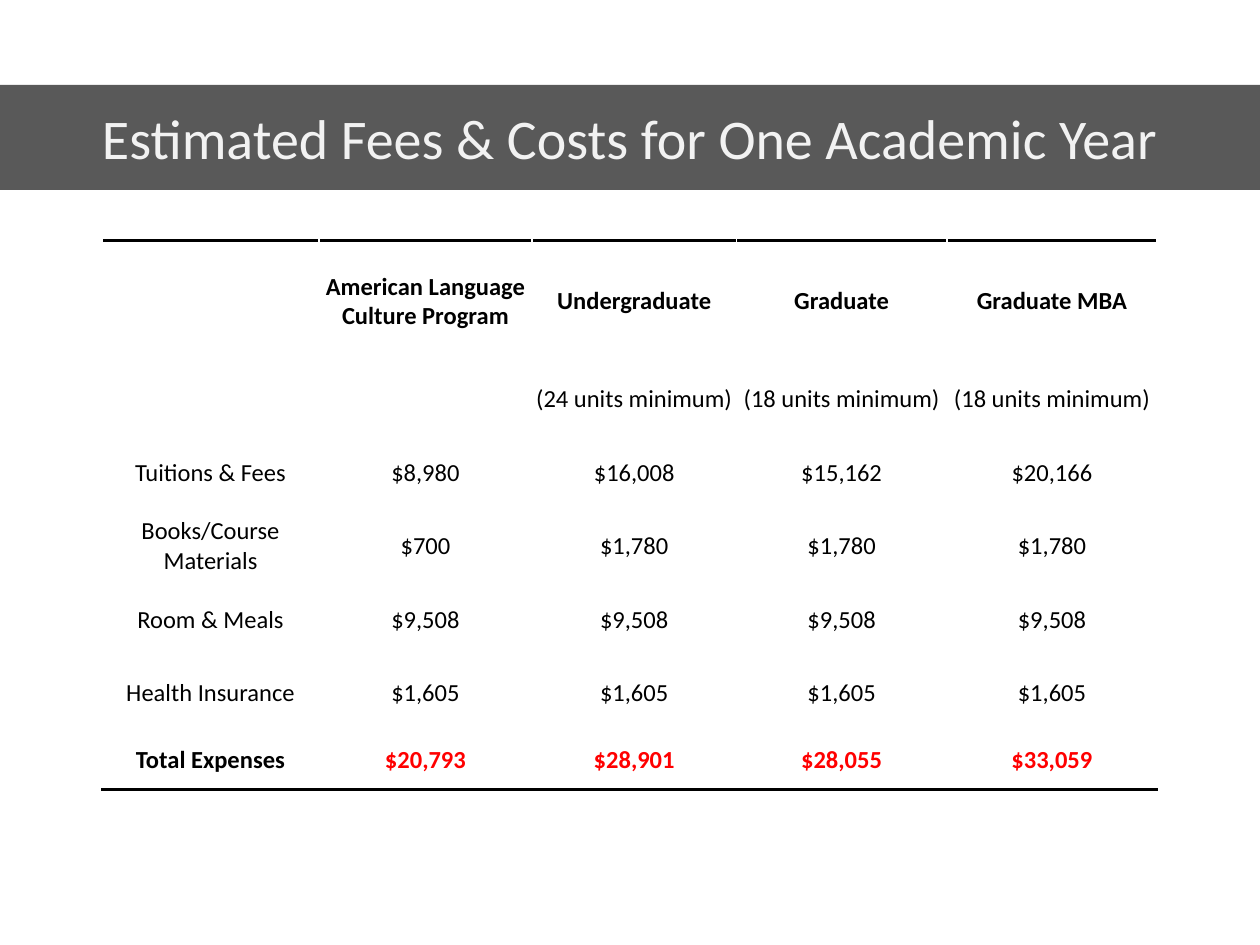
import pptx
import pptx.util
import pptx.oxml
from pptx.dml.color import RGBColor
from pptx.enum.text import MSO_ANCHOR, MSO_AUTO_SIZE, PP_ALIGN

Pt = pptx.util.Pt

# Content
TITLE = "Estimated Fees & Costs for One Academic Year"
ROWS = [
    ["", "American Language\nCulture Program", "Undergraduate", "Graduate", "Graduate MBA"],
    ["", "", "(24 units minimum)", "(18 units minimum)", "(18 units minimum)"],
    ["Tuitions & Fees", "$8,980", "$16,008", "$15,162", "$20,166"],
    ["Books/Course Materials", "$700", "$1,780", "$1,780", "$1,780"],
    ["Room & Meals"] + ["$9,508"] * 4,
    ["Health Insurance"] + ["$1,605"] * 4,
    ["Total Expenses", "$20,793", "$28,901", "$28,055", "$33,059"],
]

# Theme and layout, in points
THEME = {
    "font": "Calibri", "title_size": 32, "cell_size": 14, "rule": 2,
    "band": "595959", "title": "F2F2F2", "text": "000000",
    "total": "FF0000", "cell": "FFFFFF",
}
SLIDE_W, SLIDE_H = 720, 540
BAND_TOP, BAND_H = 55.5, 46
TABLE_LEFT, TABLE_TOP = 58.3, 137.3
COL_WIDTHS = [124, 121.7, 116.9, 120.2, 120.2]
ROW_HEIGHTS = [70, 42, 42, 42, 42, 42, 34]
CELL_INSET = 0.75


def write(tf, text, size, color, bold=False):
    """Fill a text frame with one centred paragraph per line of text."""
    for i, line in enumerate(text.split("\n")):
        p = tf.add_paragraph() if i else tf.paragraphs[0]
        p.alignment = PP_ALIGN.CENTER
        r = p.add_run()
        r.text = line
        r.font.name = THEME["font"]
        r.font.size = Pt(size)
        r.font.bold = bold
        r.font.color.rgb = RGBColor.from_string(color)


def fill(obj, color):
    obj.fill.solid()
    obj.fill.fore_color.rgb = RGBColor.from_string(color)


def add_rule(cell, side):
    """Draw a line on the top (T) or bottom (B) side of a cell."""
    ns = "http://schemas.openxmlformats.org/drawingml/2006/main"
    line = pptx.oxml.parse_xml(
        f'<a:ln{side} xmlns:a="{ns}" w="{Pt(THEME["rule"])}"><a:solidFill>'
        f'<a:srgbClr val="{THEME["text"]}"/></a:solidFill></a:ln{side}>')
    cell._tc.get_or_add_tcPr().insert(0, line)


prs = pptx.Presentation()
prs.slide_width, prs.slide_height = Pt(SLIDE_W), Pt(SLIDE_H)
s = prs.slides.add_slide(prs.slide_layouts[5])

# Title band
title = s.shapes.title
title.left, title.top = Pt(0), Pt(BAND_TOP)
title.width, title.height = Pt(SLIDE_W), Pt(BAND_H)
fill(title, THEME["band"])
title.text_frame.word_wrap = True
title.text_frame.auto_size = MSO_AUTO_SIZE.SHAPE_TO_FIT_TEXT
title.text_frame.vertical_anchor = MSO_ANCHOR.MIDDLE
write(title.text_frame, TITLE, THEME["title_size"], THEME["title"])

# Cost table
table = s.shapes.add_table(
    len(ROWS), len(COL_WIDTHS), Pt(TABLE_LEFT), Pt(TABLE_TOP),
    Pt(sum(COL_WIDTHS)), Pt(sum(ROW_HEIGHTS))).table
table.first_row = table.horz_banding = False
for col, width in zip(table.columns, COL_WIDTHS):
    col.width = Pt(width)
for row, height in zip(table.rows, ROW_HEIGHTS):
    row.height = Pt(height)

last = len(ROWS) - 1
for i, values in enumerate(ROWS):
    for j, value in enumerate(values):
        cell = table.cell(i, j)
        fill(cell, THEME["cell"])
        cell.vertical_anchor = MSO_ANCHOR.MIDDLE
        cell.margin_left = cell.margin_right = Pt(CELL_INSET)
        cell.margin_top = cell.margin_bottom = Pt(CELL_INSET)
        if value:
            color = THEME["total" if i == last and j else "text"]
            write(cell.text_frame, value, THEME["cell_size"], color, bold=i in (0, last))
        if i in (0, last):
            add_rule(cell, "B" if i else "T")

prs.save("out.pptx")
